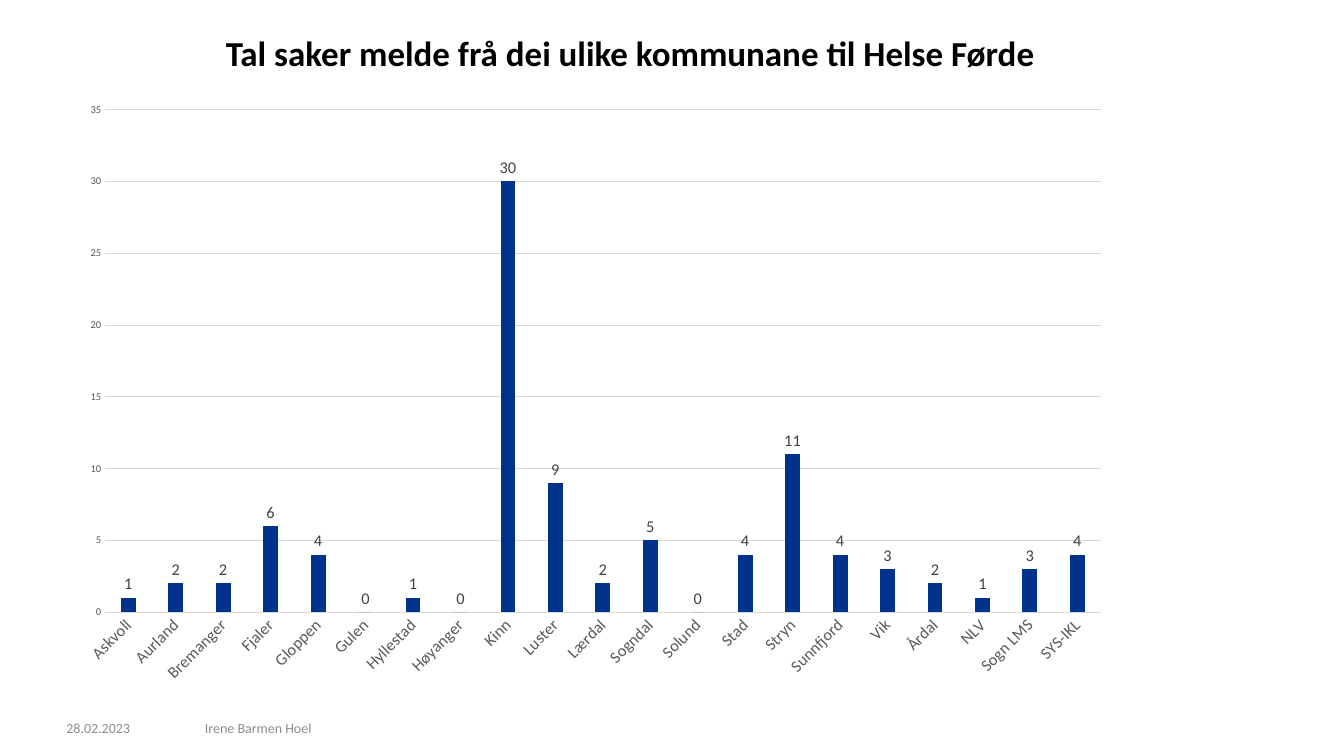
from pptx import Presentation
from pptx.chart.data import CategoryChartData
from pptx.dml.color import RGBColor
from pptx.enum.chart import XL_CHART_TYPE as ChartType
from pptx.enum.chart import XL_LABEL_POSITION as LabelPosition
from pptx.enum.chart import XL_TICK_MARK as TickMark
from pptx.enum.text import MSO_ANCHOR as Anchor
from pptx.enum.text import PP_ALIGN as Align
from pptx.util import Inches, Pt

BLACK = RGBColor(0x00, 0x00, 0x00)
BLUE = RGBColor(0x00, 0x33, 0x8D)
AXIS_GRAY = RGBColor(0x59, 0x59, 0x59)
LABEL_GRAY = RGBColor(0x40, 0x40, 0x40)
FOOTER_GRAY = RGBColor(0x8C, 0x8C, 0x8C)
GRID_GRAY = RGBColor(0xD9, 0xD9, 0xD9)
FONT = "Calibri"

CASES = {
    "Askvoll": 1, "Aurland": 2, "Bremanger": 2, "Fjaler": 6, "Gloppen": 4,
    "Gulen": 0, "Hyllestad": 1, "Høyanger": 0, "Kinn": 30, "Luster": 9,
    "Lærdal": 2, "Sogndal": 5, "Solund": 0, "Stad": 4, "Stryn": 11,
    "Sunnfjord": 4, "Vik": 3, "Årdal": 2, "NLV": 1, "Sogn LMS": 3, "SYS-IKL": 4,
}


def set_format(target, values):
    for name, value in values.items():
        setattr(target, name, value)


def set_font(font, size, color, bold=False):
    set_format(font, {"name": FONT, "size": Pt(size), "bold": bold})
    font.color.rgb = color


def set_line(line, color):
    line.color.rgb = color
    line.width = Pt(0.75)


def place(shape, box):
    names = ("left", "top", "width", "height")
    set_format(shape, dict(zip(names, map(Inches, box))))


def write_text(shape, text, anchor, size, color, bold=False):
    frame = shape.text_frame
    set_format(frame, {
        "margin_left": 0, "margin_top": 0, "margin_right": 0, "margin_bottom": 0,
        "word_wrap": True, "vertical_anchor": anchor, "text": text,
    })
    paragraph = frame.paragraphs[0]
    set_font(paragraph.runs[0].font, size, color, bold)
    return paragraph


def add_title(slide, box, text):
    title = slide.shapes.title
    place(title, box)
    paragraph = write_text(title, text, Anchor.TOP, 30, BLACK, bold=True)
    set_format(paragraph, {"alignment": Align.CENTER, "line_spacing": Pt(32)})


def add_case_chart(slide, box):
    data = CategoryChartData()
    data.categories = list(CASES)
    data.add_series("Series 1", list(CASES.values()))
    chart = slide.shapes.add_chart(
        ChartType.COLUMN_CLUSTERED, *map(Inches, box), data).chart
    set_format(chart, {"has_legend": False, "has_title": False})
    set_font(chart.font, 10, BLACK)

    # Axes
    no_ticks = {"major_tick_mark": TickMark.NONE, "minor_tick_mark": TickMark.NONE}
    for axis, size in ((chart.category_axis, 14), (chart.value_axis, 9)):
        set_format(axis, no_ticks)
        set_font(axis.tick_labels.font, size, AXIS_GRAY)
    set_line(chart.category_axis.format.line, GRID_GRAY)
    text_body = chart.category_axis._element.txPr
    text_body.bodyPr.set("rot", "-2700000")
    text_body.bodyPr.set("vert", "horz")
    value_axis = chart.value_axis
    set_format(value_axis, {"minimum_scale": 0, "maximum_scale": 35, "major_unit": 5})
    value_axis.format.line.fill.background()
    set_line(value_axis.major_gridlines.format.line, GRID_GRAY)

    # Columns and their values
    plot = chart.plots[0]
    set_format(plot, {"gap_width": 219, "overlap": -27,
                      "vary_by_categories": False, "has_data_labels": True})
    set_format(plot.data_labels, {"show_value": True,
                                  "position": LabelPosition.OUTSIDE_END})
    set_font(plot.data_labels.font, 14, LABEL_GRAY)
    fill = plot.series[0].format.fill
    fill.solid()
    fill.fore_color.rgb = BLUE


def add_footer(slide, box, date, author):
    left, top, width, height = box
    author_offset = 1.65
    parts = ((date, left, 1.26), (author, left + author_offset, width - author_offset))
    for text, part_left, part_width in parts:
        shape = slide.shapes.add_textbox(
            *map(Inches, (part_left, top, part_width, height)))
        write_text(shape, text, Anchor.MIDDLE, 12, FOOTER_GRAY)


def main():
    presentation = Presentation()
    set_format(presentation, {"slide_width": Inches(16), "slide_height": Inches(9)})
    slide = presentation.slides.add_slide(presentation.slide_layouts[5])
    add_footer(slide, (0.79, 8.54, 11.42, 0.24), "28.02.2023", "Irene Barmen Hoel")
    add_title(slide, (0.79, 0.43, 13.43, 0.66),
              "Tal saker melde frå dei ulike kommunane til Helse Førde")
    add_case_chart(slide, (0.79, 1.09, 12.57, 7.18))
    presentation.save("out.pptx")


if __name__ == "__main__":
    main()
